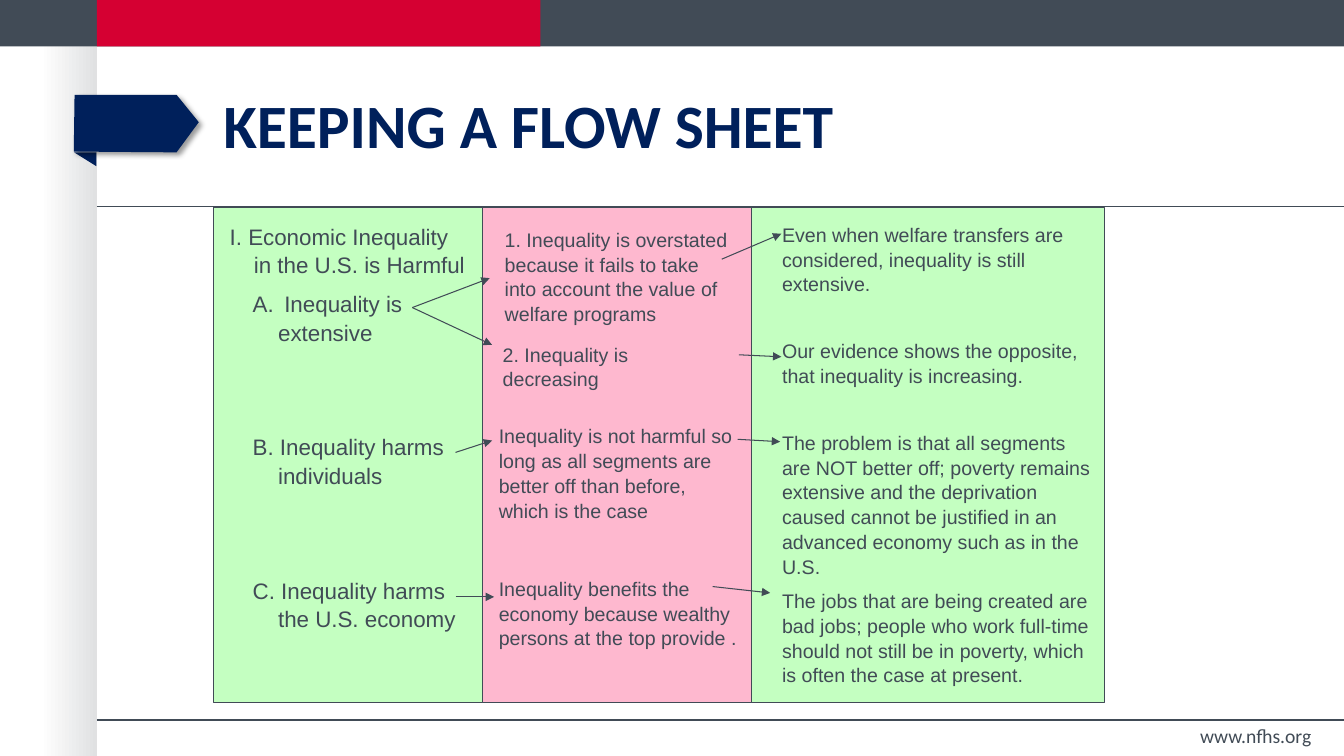
from dataclasses import dataclass

from lxml.etree import SubElement
from pptx import Presentation
from pptx.dml.color import RGBColor
from pptx.enum.shapes import MSO_CONNECTOR, MSO_SHAPE
from pptx.enum.text import MSO_ANCHOR, PP_ALIGN
from pptx.oxml.ns import qn
from pptx.util import Cm, Pt

SLATE = RGBColor(0x41, 0x4B, 0x56)
RED = RGBColor(0xD5, 0x00, 0x32)
NAVY = RGBColor(0x00, 0x20, 0x5B)
GREEN = RGBColor(0xC4, 0xFF, 0xC1)
PINK = RGBColor(0xFE, 0xB8, 0xCF)
WHITE = RGBColor(0xFF, 0xFF, 0xFF)
SILVER = RGBColor(0xE0, 0xE1, 0xE2)


@dataclass(frozen=True)
class Box:
    left: float
    top: float
    width: float
    height: float


@dataclass(frozen=True)
class Style:
    size: float
    font: str = "Arial"
    color: RGBColor = SLATE
    bold: bool = False
    anchor: MSO_ANCHOR = MSO_ANCHOR.TOP
    align: PP_ALIGN = PP_ALIGN.LEFT
    spacing: float = 1.05


@dataclass(frozen=True)
class Entry:
    text: str
    space_before: float = 0
    margin: float = 0
    indent: float = 0
    lettered: bool = False


@dataclass(frozen=True)
class Line:
    start_x: float
    start_y: float
    end_x: float
    end_y: float
    width: float = 0.75
    arrow: bool = True


@dataclass(frozen=True)
class Column:
    width: float
    color: RGBColor


@dataclass(frozen=True)
class Note:
    box: Box
    style: Style
    entries: tuple[Entry, ...]


OUTLINE = Style(16)
NOTES = Style(14)
HEADING = Style(44, "Calibri", NAVY, True, MSO_ANCHOR.MIDDLE, spacing=1.0)
FOOTER = Style(14, "Calibri", anchor=MSO_ANCHOR.MIDDLE, align=PP_ALIGN.RIGHT, spacing=1.0)

COLUMNS_LEFT, COLUMNS_TOP, COLUMNS_HEIGHT = 5.38, 5.24, 12.47
COLUMNS = (Column(6.78, GREEN), Column(6.78, PINK), Column(8.89, GREEN))

TEXTS = (
    Note(Box(5.38, 1.45, 27.86, 3.35), HEADING, (Entry("KEEPING A FLOW SHEET"),)),
    Note(Box(27.76, 18.14, 5.54, 0.81), FOOTER, (Entry("www.nfhs.org"),)),
    Note(Box(5.49, 5.46, 6.6, 10.85), OUTLINE, (
        Entry("I. Economic Inequality in the U.S. is Harmful", 0, 0.66, -0.61),
        Entry(" Inequality is extensive", 8, 1.27, -0.64, True),
        Entry("B. Inequality harms individuals", 62, 1.27, -0.64),
        Entry("C. Inequality harms the U.S. economy", 62, 1.27, -0.64),
    )),
    Note(Box(12.47, 5.59, 6.22, 2.64), NOTES, (
        Entry("1. Inequality is overstated because it fails to take into account "
              "the value of welfare programs"),
    )),
    Note(Box(12.42, 8.48, 6.1, 0.86), NOTES, (Entry("2. Inequality is decreasing"),)),
    Note(Box(12.32, 10.54, 6.43, 2.64), NOTES, (
        Entry("Inequality is not harmful so long as all segments are better off "
              "than before, which is the case"),
    )),
    Note(Box(12.32, 14.38, 6.55, 2.06), NOTES, (
        Entry("Inequality benefits the economy because wealthy persons at the top provide ."),
    )),
    Note(Box(19.46, 5.46, 8.36, 11.94), NOTES, (
        Entry("Even when welfare transfers are considered, inequality is still extensive."),
        Entry("Our evidence shows the opposite, that inequality is increasing.", 30.3),
        Entry("The problem is that all segments are NOT better off; poverty remains extensive "
              "and the deprivation caused cannot be justified in an advanced economy such as "
              "in the U.S.", 30.3),
        Entry("The jobs that are being created are bad jobs; people who work full-time should "
              "not still be in poverty, which is often the case at present.", 7.2),
    )),
)

RULES = tuple(Line(2.44, height, 33.87, height, 1, False) for height in (5.21, 18.14))
ARROWS = (
    Line(10.39, 7.75, 12.34, 7.01),
    Line(10.39, 7.75, 12.4, 8.69),
    Line(11.48, 11.4, 12.4, 11.1),
    Line(11.48, 15.04, 12.45, 15.04),
    Line(18.19, 6.53, 19.69, 5.89),
    Line(18.62, 8.94, 19.69, 8.99),
    Line(18.59, 11.07, 19.66, 11.13),
    Line(17.96, 14.78, 19.41, 14.94),
)

BANNER_FOLD = ((1.87, 3.84), (2.43, 3.84), (2.43, 4.19))
BANNER = ((1.88, 2.39), (1.86, 3.82), (4.45, 3.84), (5.01, 3.08), (4.45, 2.39))


def add_rectangle(slide, box: Box, color: RGBColor, outlined: bool = False):
    shape = slide.shapes.add_shape(
        MSO_SHAPE.RECTANGLE, Cm(box.left), Cm(box.top), Cm(box.width), Cm(box.height))
    shape.shadow.inherit = False
    shape.fill.solid()
    shape.fill.fore_color.rgb = color
    if outlined:
        shape.line.color.rgb = SLATE
        shape.line.width = Pt(0.75)
    else:
        shape.line.fill.background()
    return shape


def add_side_shade(slide) -> None:
    shape = add_rectangle(slide, Box(1.02, 1.14, 1.42, 17.91), SILVER)
    shape.fill.gradient()
    shape.fill.gradient_angle = 0
    for stop, color in zip(shape.fill.gradient_stops, (WHITE, SILVER)):
        stop.color.rgb = color


def add_outline(slide, points: tuple[tuple[float, float], ...]):
    corners = [(Cm(x), Cm(y)) for x, y in points]
    builder = slide.shapes.build_freeform(*corners[0])
    builder.add_line_segments(corners[1:], close=True)
    shape = builder.convert_to_shape()
    shape.shadow.inherit = False
    shape.fill.solid()
    shape.fill.fore_color.rgb = NAVY
    shape.line.fill.background()
    return shape


def add_drop_shadow(shape) -> None:
    effects = shape._element.spPr.find(qn("a:effectLst"))
    shadow = SubElement(effects, qn("a:outerShdw"), blurRad=str(Pt(4)), dist=str(Pt(3)),
                        dir="2700000", algn="tl", rotWithShape="0")
    color = SubElement(shadow, qn("a:srgbClr"), val="000000")
    SubElement(color, qn("a:alpha"), val="40000")


def add_line(slide, line: Line) -> None:
    connector = slide.shapes.add_connector(
        MSO_CONNECTOR.STRAIGHT, Cm(line.start_x), Cm(line.start_y), Cm(line.end_x), Cm(line.end_y))
    connector.line.color.rgb = SLATE
    connector.line.width = Pt(line.width)
    if line.arrow:
        SubElement(connector.line._get_or_add_ln(), qn("a:tailEnd"), type="triangle")
    SubElement(connector._element.spPr, qn("a:effectLst"))


def add_note(slide, note: Note) -> None:
    box, style = note.box, note.style
    shape = slide.shapes.add_textbox(Cm(box.left), Cm(box.top), Cm(box.width), Cm(box.height))
    frame = shape.text_frame
    frame.word_wrap = True
    frame.vertical_anchor = style.anchor
    frame.text = "\n".join(entry.text for entry in note.entries)
    for paragraph, entry in zip(frame.paragraphs, note.entries):
        paragraph.alignment = style.align
        paragraph.line_spacing = style.spacing
        paragraph.space_before = Pt(entry.space_before)
        properties = paragraph._p.get_or_add_pPr()
        properties.set("marL", str(Cm(entry.margin)))
        properties.set("indent", str(Cm(entry.indent)))
        if entry.lettered:
            SubElement(properties, qn("a:buFont"), typeface=style.font)
            SubElement(properties, qn("a:buAutoNum"), type="alphaUcPeriod")
        for run in paragraph.runs:
            run.font.size = Pt(style.size)
            run.font.name = style.font
            run.font.bold = style.bold
            run.font.color.rgb = style.color


def main() -> None:
    presentation = Presentation()
    presentation.slide_width = Cm(33.87)
    presentation.slide_height = Cm(19.05)
    slide = presentation.slides.add_slide(presentation.slide_layouts[6])
    add_side_shade(slide)
    add_rectangle(slide, Box(0, 0, 33.87, 1.17), SLATE)
    add_rectangle(slide, Box(2.44, 0, 11.18, 1.17), RED)
    add_outline(slide, BANNER_FOLD)
    add_drop_shadow(add_outline(slide, BANNER))
    left = COLUMNS_LEFT
    for column in COLUMNS:
        add_rectangle(slide, Box(left, COLUMNS_TOP, column.width, COLUMNS_HEIGHT), column.color, True)
        left += column.width
    for note in TEXTS:
        add_note(slide, note)
    for line in RULES + ARROWS:
        add_line(slide, line)
    presentation.save("out.pptx")


if __name__ == "__main__":
    main()
